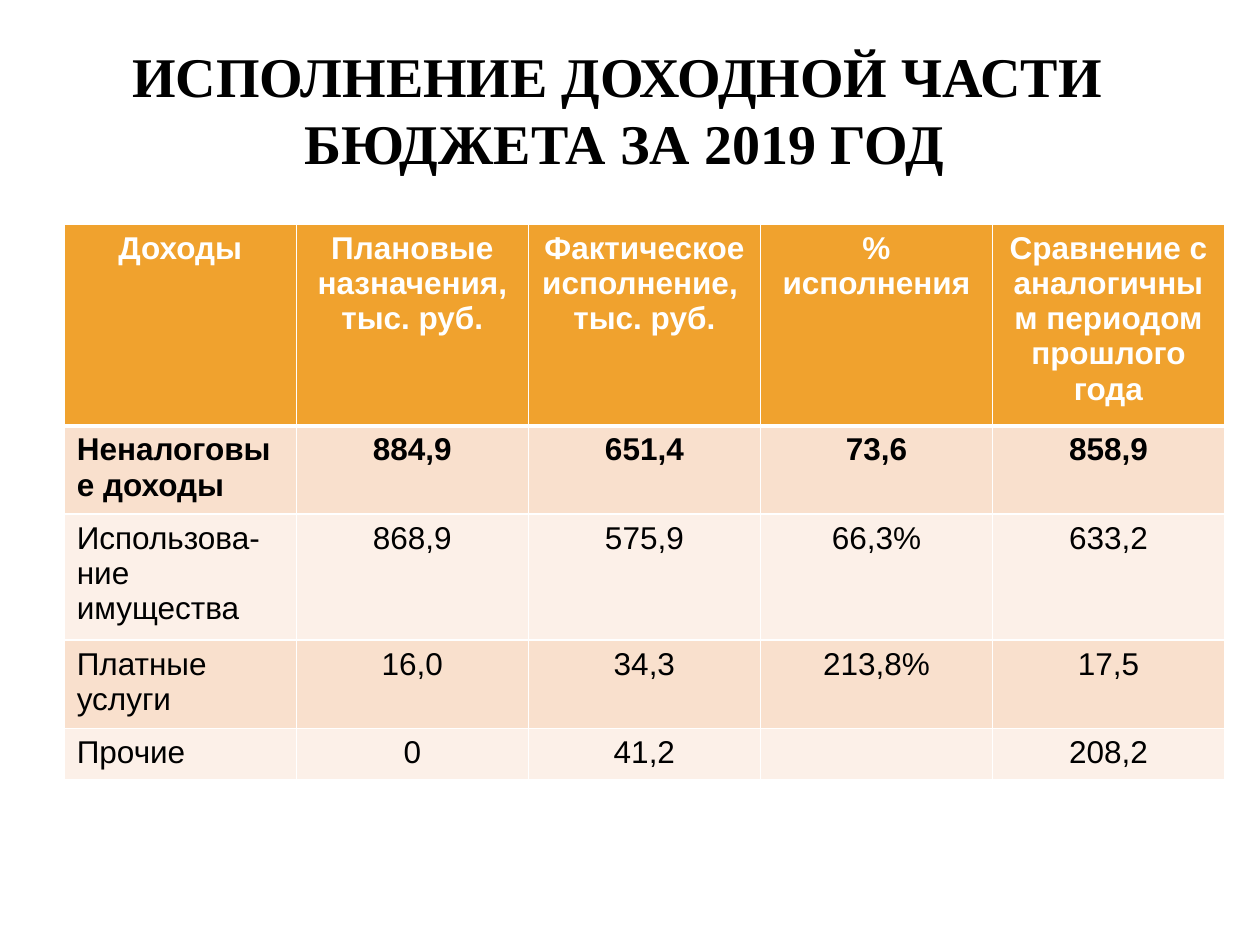
from dataclasses import dataclass

import pptx
import pptx.dml.color
import pptx.enum.text
import pptx.oxml.ns
import pptx.util
from lxml import etree

Inches = pptx.util.Inches
Pt = pptx.util.Pt
Align = pptx.enum.text.PP_ALIGN


@dataclass(frozen=True)
class Theme:
    title_font: str = "Times New Roman"
    table_font: str = "Arial"
    title_size: int = 32
    table_size: int = 18
    text: str = "000000"
    header_text: str = "FFFFFF"
    header_fill: str = "F0A22E"
    band_fills: tuple = ("F9E0CD", "FCF0E8")
    border: str = "FFFFFF"
    border_width: float = 1
    header_border_width: float = 3


THEME = Theme()
TITLE = "ИСПОЛНЕНИЕ ДОХОДНОЙ ЧАСТИ  БЮДЖЕТА ЗА 2019 ГОД"
BOLD_ROWS = (0, 1)
INCOME_ROWS = [
    ["Доходы", "Плановые назначения, тыс. руб.",
     "Фактическое исполнение,  тыс. руб.", "%\nисполнения",
     "Сравнение с аналогичным периодом прошлого года"],
    ["Неналоговые доходы", "884,9", "651,4", "73,6", "858,9"],
    ["Использова-ние имущества", "868,9", "575,9", "66,3%", "633,2"],
    ["Платные услуги", "16,0", "34,3", "213,8%", "17,5"],
    ["Прочие", "0", "41,2", "", "208,2"],
]


def rgb(value):
    return pptx.dml.color.RGBColor.from_string(value)


def write_text(frame, text, font, size, color, bold, align):
    frame.text = text
    for paragraph in frame.paragraphs:
        paragraph.alignment = align
        for span in paragraph.runs:
            span.font.name = font
            span.font.size = Pt(size)
            span.font.bold = bold
            span.font.color.rgb = rgb(color)


def add_title(page):
    box = page.shapes.add_textbox(Inches(0.27), Inches(0.28), Inches(9.37), Inches(1.18))
    frame = box.text_frame
    frame.word_wrap = True
    frame.auto_size = pptx.enum.text.MSO_AUTO_SIZE.SHAPE_TO_FIT_TEXT
    write_text(frame, TITLE, THEME.title_font, THEME.title_size, THEME.text, True, Align.CENTER)


def set_borders(cell, top, bottom):
    """Draw all four sides; must run before the cell gets its fill."""
    properties = cell._tc.get_or_add_tcPr()
    side = THEME.border_width
    for tag, width in (("a:lnL", side), ("a:lnR", side), ("a:lnT", top), ("a:lnB", bottom)):
        line = etree.SubElement(properties, pptx.oxml.ns.qn(tag), w=str(Pt(width)))
        fill = etree.SubElement(line, pptx.oxml.ns.qn("a:solidFill"))
        etree.SubElement(fill, pptx.oxml.ns.qn("a:srgbClr"), val=THEME.border)


def style_cell(cell, text, row, column):
    header = row == 0
    thin, thick = THEME.border_width, THEME.header_border_width
    set_borders(cell, thick if row == 1 else thin, thick if header else thin)
    cell.fill.solid()
    cell.fill.fore_color.rgb = rgb(THEME.header_fill if header else THEME.band_fills[(row - 1) % 2])
    write_text(cell.text_frame, text, THEME.table_font, THEME.table_size,
               THEME.header_text if header else THEME.text, row in BOLD_ROWS,
               Align.CENTER if header or column else Align.LEFT)


def add_income_table(page):
    height = Inches(3.81)
    holder = page.shapes.add_table(len(INCOME_ROWS), len(INCOME_ROWS[0]),
                                   Inches(0.51), Inches(1.78), Inches(9.21), height)
    table = holder.table
    for row, texts in enumerate(INCOME_ROWS):
        table.rows[row].height = Inches(0.41)
        for column, text in enumerate(texts):
            style_cell(table.cell(row, column), text, row, column)
    holder.height = height


def main():
    deck = pptx.Presentation()
    deck.slide_width, deck.slide_height = Inches(10), Inches(7.5)
    page = deck.slides.add_slide(deck.slide_layouts[6])
    add_title(page)
    add_income_table(page)
    deck.save("out.pptx")


if __name__ == "__main__":
    main()
